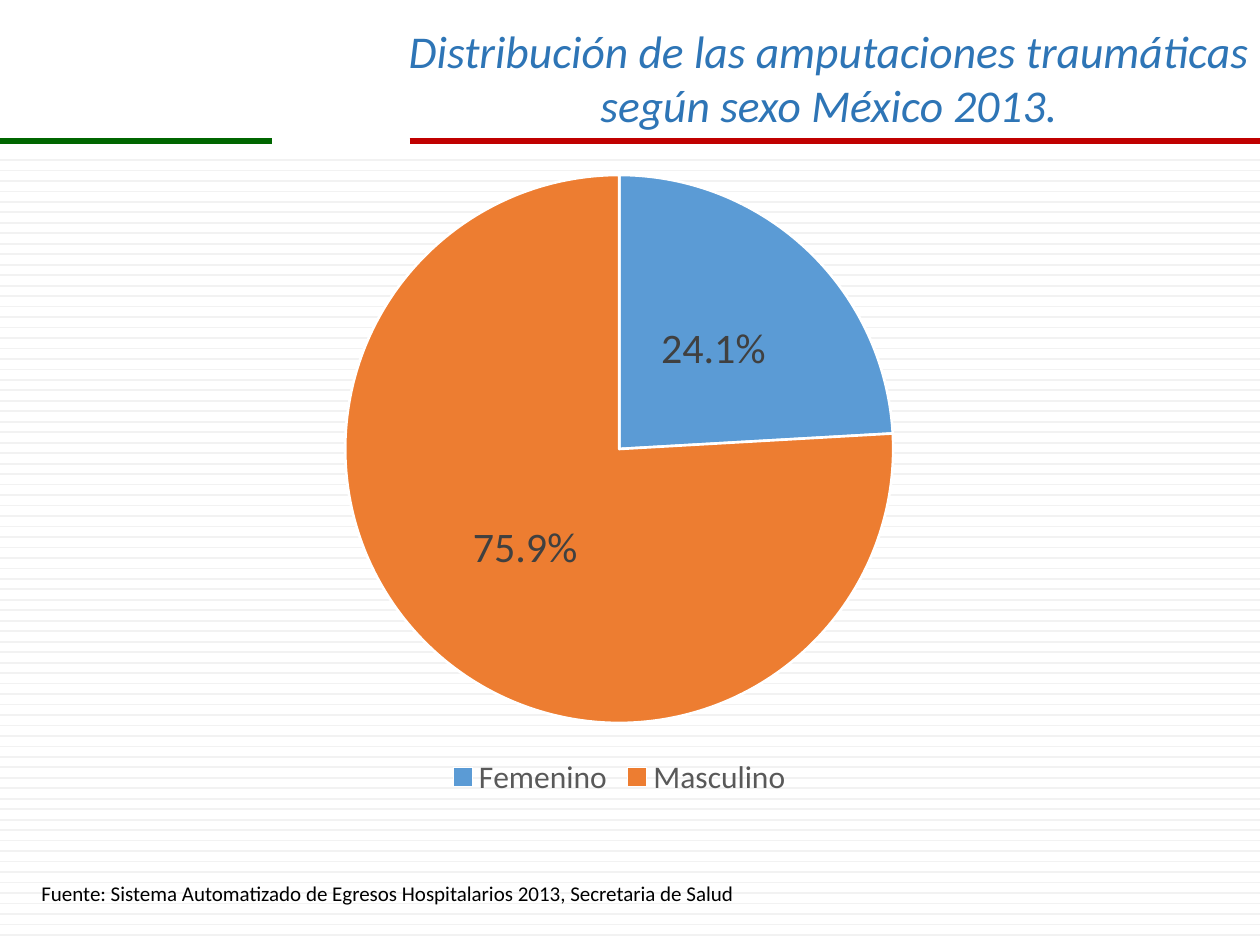
from dataclasses import dataclass

from lxml import etree
from pptx import Presentation
from pptx.chart.data import CategoryChartData
from pptx.dml.color import RGBColor
from pptx.enum.chart import XL_CHART_TYPE, XL_LABEL_POSITION, XL_LEGEND_POSITION
from pptx.enum.shapes import MSO_CONNECTOR
from pptx.enum.text import MSO_AUTO_SIZE, PP_ALIGN
from pptx.oxml.ns import qn
from pptx.util import Inches, Pt

STRAIGHT = MSO_CONNECTOR.STRAIGHT
PIE = XL_CHART_TYPE.PIE
LABEL_CENTER = XL_LABEL_POSITION.CENTER
LEGEND_BOTTOM = XL_LEGEND_POSITION.BOTTOM
LEFT, CENTER = PP_ALIGN.LEFT, PP_ALIGN.CENTER
FIT_SHAPE = MSO_AUTO_SIZE.SHAPE_TO_FIT_TEXT

# The page is a grid of 10 columns by 7.5 rows, one inch each.
COLUMNS, ROWS = 10, 7.5
STRIPE_COUNT, FIRST_STRIPE, LAST_STRIPE = 75, 1.27, 7.42


@dataclass(frozen=True)
class Theme:
    font: str = "Calibri"
    title: str = "2E75B6"
    body: str = "000000"
    label: str = "404040"
    legend: str = "595959"
    white: str = "FFFFFF"
    stripe: str = "F2F2F2"
    green: str = "006600"
    red: str = "C00000"
    title_size: float = 26
    label_size: float = 24
    legend_size: float = 18
    source_size: float = 12


@dataclass(frozen=True)
class Area:
    column: float
    row: float
    columns: float
    rows: float

    def lengths(self) -> list:
        return [Inches(v) for v in (self.column, self.row, self.columns, self.rows)]


@dataclass(frozen=True)
class Rule:
    start: float
    end: float
    row: float
    color: str
    weight: float


@dataclass(frozen=True)
class TextBlock:
    area: Area
    lines: tuple
    size: float
    color: str
    align: PP_ALIGN = LEFT
    italic: bool = False


@dataclass(frozen=True)
class Slice:
    name: str
    percent: float
    color: str


THEME = Theme()
STRIPE_GAP = (LAST_STRIPE - FIRST_STRIPE) / (STRIPE_COUNT - 1)
STRIPES = [
    Rule(0, COLUMNS, FIRST_STRIPE + index * STRIPE_GAP, THEME.stripe, 1)
    for index in range(STRIPE_COUNT)
]
HEADER_RULES = [
    Rule(0, 2.16, 1.12, THEME.green, 3),
    Rule(3.25, COLUMNS, 1.12, THEME.red, 3),
]
TEXTS = [
    TextBlock(
        Area(0.23, 6.94, 8.26, 0.3),
        ("Fuente: Sistema Automatizado de Egresos Hospitalarios 2013, Secretaria de Salud",),
        THEME.source_size, THEME.body,
    ),
    TextBlock(
        Area(1.81, 0.13, 9.54, 0.98),
        ("Distribución de las amputaciones traumáticas", "según sexo México 2013."),
        THEME.title_size, THEME.title, CENTER, True,
    ),
]
SLICES = [Slice("Femenino", 24.1, "5B9BD5"), Slice("Masculino", 75.9, "ED7D31")]
CHART_AREA = Area(0.65, 1.25, 8.53, 5.12)
PLOT_SHARES = {"x": 0.245, "y": 0.027, "w": 0.51, "h": 0.85}


def style_font(font, size: float, color: str, italic: bool = False) -> None:
    font.name = THEME.font
    font.size = Pt(size)
    font.italic = italic
    font.color.rgb = RGBColor.from_string(color)


def draw_rule(shapes, rule: Rule) -> None:
    row = Inches(rule.row)
    line = shapes.add_connector(STRAIGHT, Inches(rule.start), row, Inches(rule.end), row)
    line.line.color.rgb = RGBColor.from_string(rule.color)
    line.line.width = Pt(rule.weight)
    etree.SubElement(line._element.spPr, qn("a:effectLst"))


def draw_text(shapes, block: TextBlock) -> None:
    box = shapes.add_textbox(*block.area.lengths())
    frame = box.text_frame
    frame.word_wrap = True
    frame.auto_size = FIT_SHAPE
    frame.text = "\n".join(block.lines)
    for para in frame.paragraphs:
        para.alignment = block.align
        for span in para.runs:
            style_font(span.font, block.size, block.color, block.italic)


def place_plot(chart, shares: dict) -> None:
    """Fix the inner plot area as shares of the chart's size."""
    plot_area = chart._chartSpace.chart.plotArea
    for old in plot_area.findall(qn("c:layout")):
        plot_area.remove(old)
    layout = etree.Element(qn("c:layout"))
    plot_area.insert(0, layout)
    manual = etree.SubElement(layout, qn("c:manualLayout"))
    settings = {"layoutTarget": "inner", "xMode": "edge", "yMode": "edge", **shares}
    for name, value in settings.items():
        etree.SubElement(manual, qn(f"c:{name}")).set("val", str(value))


def draw_pie(shapes, area: Area, slices: list) -> None:
    data = CategoryChartData()
    data.categories = [piece.name for piece in slices]
    data.add_series("Series 1", [piece.percent for piece in slices])
    chart = shapes.add_chart(PIE, *area.lengths(), data).chart
    style_font(chart.font, THEME.legend_size, THEME.body)
    chart.has_title = False
    chart.has_legend = True
    chart.legend.position = LEGEND_BOTTOM
    chart.legend.include_in_layout = False
    style_font(chart.legend.font, THEME.legend_size, THEME.legend)

    plot = chart.plots[0]
    plot.vary_by_categories = True
    for index, piece in enumerate(slices):
        style = plot.series[0].points[index].format
        style.fill.solid()
        style.fill.fore_color.rgb = RGBColor.from_string(piece.color)
        style.line.color.rgb = RGBColor.from_string(THEME.white)
        style.line.width = Pt(1.5)

    labels = plot.series[0].data_labels
    labels.show_percentage = True
    labels.show_value = False
    labels.number_format = "0.0%"
    labels.number_format_is_linked = False
    labels.position = LABEL_CENTER
    style_font(labels.font, THEME.label_size, THEME.label)
    place_plot(chart, PLOT_SHARES)


def main() -> None:
    deck = Presentation()
    deck.slide_width, deck.slide_height = Inches(COLUMNS), Inches(ROWS)
    page = deck.slides.add_slide(deck.slide_layouts[6])
    page.background.fill.solid()
    page.background.fill.fore_color.rgb = RGBColor.from_string(THEME.white)

    stripes = page.shapes.add_group_shape()
    for rule in STRIPES:
        draw_rule(stripes.shapes, rule)
    for rule in HEADER_RULES:
        draw_rule(page.shapes, rule)
    for block in TEXTS:
        draw_text(page.shapes, block)
    draw_pie(page.shapes, CHART_AREA, SLICES)
    deck.save("out.pptx")


if __name__ == "__main__":
    main()
